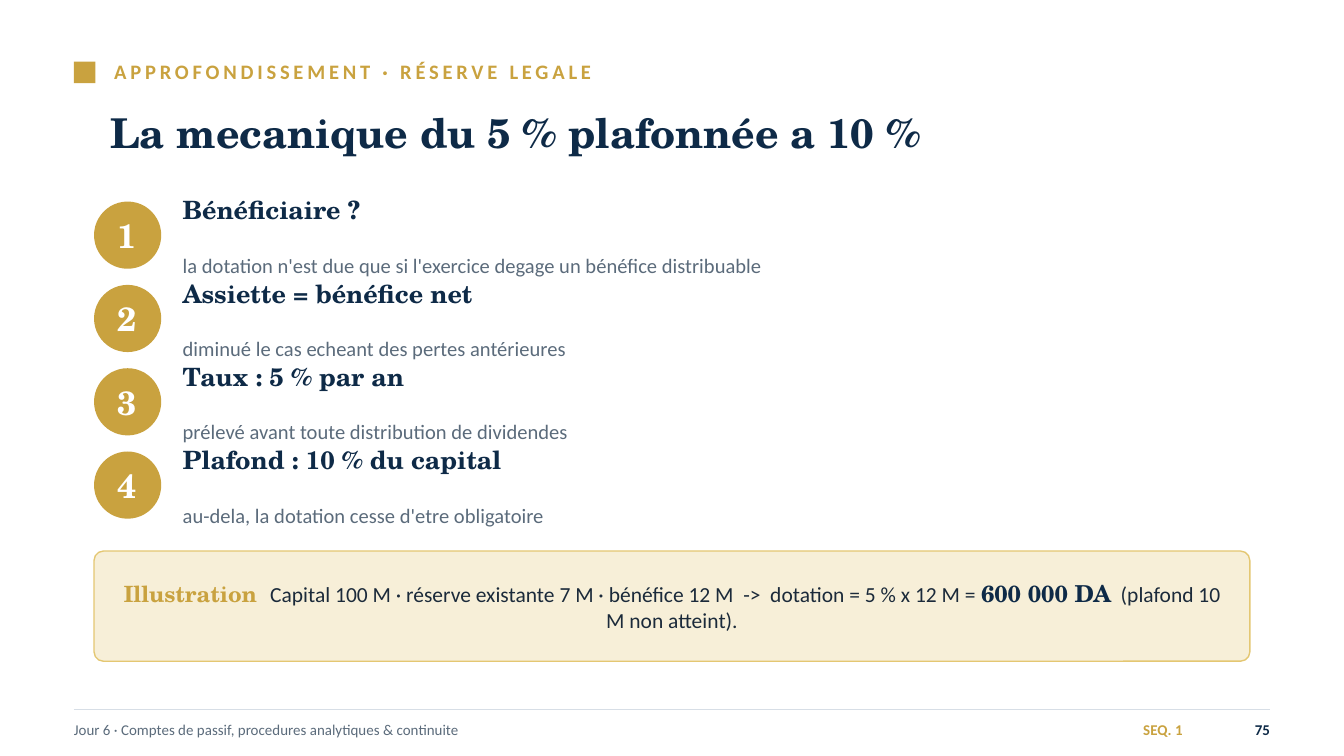
from lxml.etree import SubElement
from pptx import Presentation
from pptx.dml.color import RGBColor
from pptx.enum.shapes import MSO_CONNECTOR, MSO_SHAPE
from pptx.enum.text import MSO_ANCHOR, PP_ALIGN
from pptx.oxml.ns import qn
from pptx.util import Inches, Pt

COLORS = {
    "gold": "C9A23F",
    "navy": "0E2A47",
    "slate": "5B6B7B",
    "ink": "1B2A3A",
    "white": "FFFFFF",
    "rule": "D7DEE6",
    "cream": "F7EFD8",
    "cream_border": "E4C772",
}
SERIF, SANS = "TeX Gyre Schola", "Calibri"


def style_font(font, name, size, color, bold=False):
    font.name = name
    font.size = Pt(size)
    font.bold = bold
    font.color.rgb = RGBColor.from_string(COLORS[color])


def prepare_frame(shape, anchor=MSO_ANCHOR.MIDDLE, side_margin=0):
    """Set wrapping, anchor and margins, and return the text frame."""
    frame = shape.text_frame
    frame.word_wrap = True
    frame.vertical_anchor = anchor
    frame.margin_left = frame.margin_right = Inches(side_margin)
    frame.margin_top = frame.margin_bottom = 0
    return frame


presentation = Presentation()
presentation.slide_width = Inches(10)
presentation.slide_height = Inches(10) * 9 // 16
slide = presentation.slides.add_slide(presentation.slide_layouts[5])
shapes = slide.shapes

# Title
title = shapes.title
title.left, title.top = Inches(0.82), Inches(0.65)
title.width, title.height = Inches(8.7), Inches(0.66)
paragraph = prepare_frame(title).paragraphs[0]
paragraph.text = "La mecanique du 5 % plafonnée a 10 %"
paragraph.alignment = PP_ALIGN.LEFT
style_font(paragraph.font, SERIF, 22, "navy", True)

# Section label
marker = shapes.add_shape(
    MSO_SHAPE.RECTANGLE, Inches(0.55), Inches(0.46), Inches(0.16), Inches(0.16)
)
marker.shadow.inherit = False
marker.fill.solid()
marker.fill.fore_color.rgb = RGBColor.from_string(COLORS["gold"])
marker.line.fill.background()

label = shapes.add_textbox(Inches(0.85), Inches(0.4), Inches(8.6), Inches(0.26))
paragraph = prepare_frame(label).paragraphs[0]
run = paragraph.add_run()
run.text = "APPROFONDISSEMENT · RÉSERVE LEGALE"
style_font(run.font, SANS, 11, "gold", True)
run.font._element.set("spc", "200")

# Numbered steps
steps = [
    ("Bénéficiaire ?", "la dotation n'est due que si l'exercice degage un bénéfice distribuable"),
    ("Assiette = bénéfice net", "diminué le cas echeant des pertes antérieures"),
    ("Taux : 5 % par an", "prélevé avant toute distribution de dividendes"),
    ("Plafond : 10 % du capital", "au-dela, la dotation cesse d'etre obligatoire"),
]
for index, (heading, detail) in enumerate(steps):
    top = 1.5 + 0.62 * index
    badge = shapes.add_shape(
        MSO_SHAPE.OVAL, Inches(0.7), Inches(top), Inches(0.5), Inches(0.5)
    )
    badge.shadow.inherit = False
    badge.fill.solid()
    badge.fill.fore_color.rgb = RGBColor.from_string(COLORS["gold"])
    badge.line.fill.background()
    paragraph = prepare_frame(badge).paragraphs[0]
    paragraph.text = str(index + 1)
    paragraph.alignment = PP_ALIGN.CENTER
    style_font(paragraph.font, SERIF, 18, "white", True)

    step = shapes.add_textbox(Inches(1.36), Inches(top - 0.04), Inches(7.94), Inches(0.62))
    frame = prepare_frame(step, MSO_ANCHOR.TOP)
    paragraph = frame.paragraphs[0]
    paragraph.text = heading
    paragraph.line_spacing = 0.98
    style_font(paragraph.font, SERIF, 13.5, "navy", True)
    paragraph = frame.add_paragraph()
    paragraph.text = detail
    paragraph.line_spacing = 0.98
    paragraph.space_before = Pt(15)
    style_font(paragraph.font, SANS, 11, "slate")

# Worked example
example = shapes.add_shape(
    MSO_SHAPE.ROUNDED_RECTANGLE, Inches(0.7), Inches(4.1), Inches(8.6), Inches(0.82)
)
example.adjustments[0] = 0.085
example.shadow.inherit = False
example.fill.solid()
example.fill.fore_color.rgb = RGBColor.from_string(COLORS["cream"])
example.line.color.rgb = RGBColor.from_string(COLORS["cream_border"])
example.line.width = Pt(0.75)
paragraph = prepare_frame(example, side_margin=0.18).paragraphs[0]
paragraph.alignment = PP_ALIGN.CENTER
example_runs = [
    ("Illustration  ", SERIF, 12, "gold", True),
    (
        "Capital 100 M · réserve existante 7 M · bénéfice 12 M  ->  dotation = 5 % x 12 M = ",
        SANS, 11.5, "ink", False,
    ),
    ("600 000 DA", SERIF, 12.5, "navy", True),
    ("  (plafond 10 M non atteint).", SANS, 11.5, "ink", False),
]
for text, *style in example_runs:
    run = paragraph.add_run()
    run.text = text
    style_font(run.font, *style)

# Footer
rule = shapes.add_connector(
    MSO_CONNECTOR.STRAIGHT, Inches(0.55), Inches(5.28), Inches(9.45), Inches(5.28)
)
rule.line.color.rgb = RGBColor.from_string(COLORS["rule"])
rule.line.width = Pt(0.75)
SubElement(rule._element.spPr, qn("a:effectLst"))

footer_items = [
    ("Jour 6 · Comptes de passif, procedures analytiques & continuite",
     0.55, 6.4, PP_ALIGN.LEFT, "slate", False),
    ("SEQ. 1", 6.9, 1.9, PP_ALIGN.RIGHT, "gold", True),
    ("75", 9, 0.45, PP_ALIGN.RIGHT, "navy", True),
]
for text, left, width, alignment, color, bold in footer_items:
    footer = shapes.add_textbox(Inches(left), Inches(5.3), Inches(width), Inches(0.25))
    paragraph = prepare_frame(footer).paragraphs[0]
    paragraph.text = text
    paragraph.alignment = alignment
    style_font(paragraph.font, SANS, 8, color, bold)

presentation.save("out.pptx")
